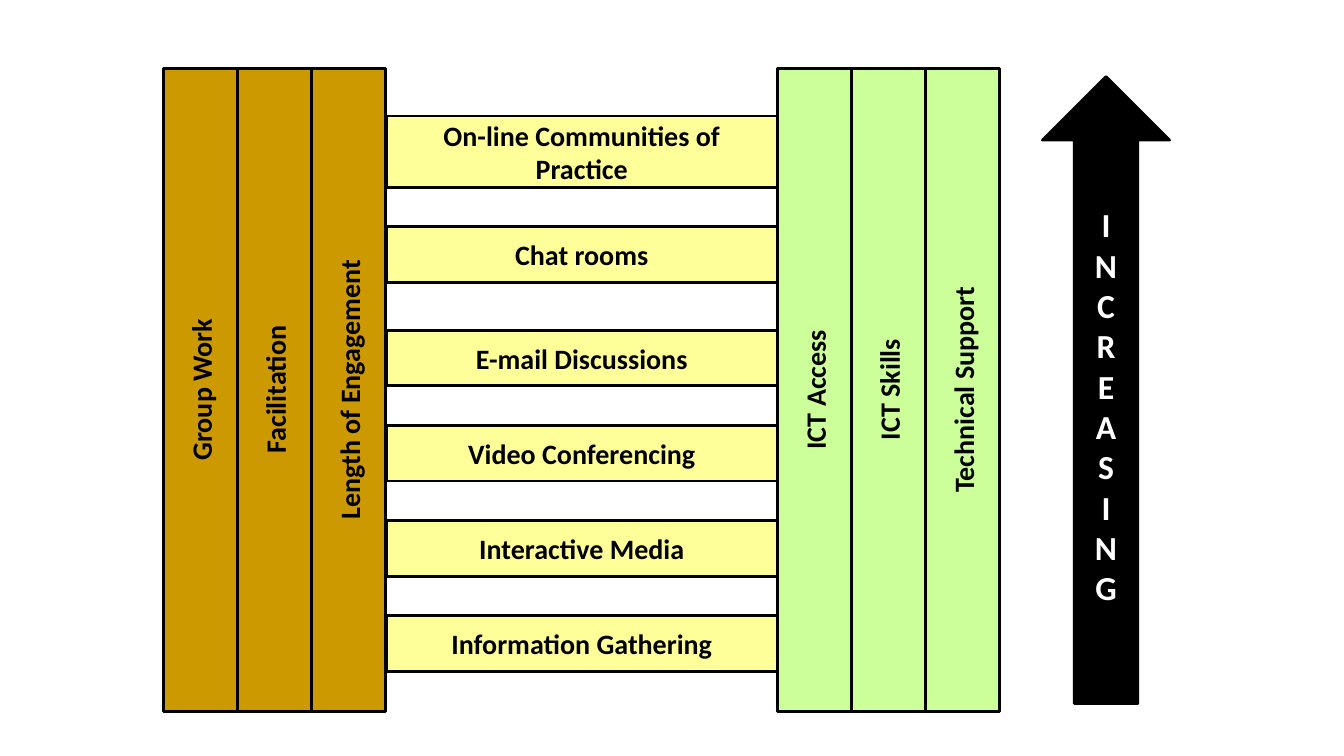
from pptx import Presentation
from pptx.dml.color import RGBColor
from pptx.enum.shapes import MSO_SHAPE
from pptx.enum.text import MSO_ANCHOR, PP_ALIGN
from pptx.util import Inches, Pt

BLACK = RGBColor(0x00, 0x00, 0x00)
WHITE = RGBColor(0xFF, 0xFF, 0xFF)
OCHRE = RGBColor(0xCC, 0x99, 0x00)
GREEN = RGBColor(0xCC, 0xFF, 0x99)
YELLOW = RGBColor(0xFF, 0xFF, 0x99)

PILLAR_LENGTH, PILLAR_WIDTH, PILLAR_PITCH = 6.38, 0.73, 0.735
PILLAR_TOP = 3.5
BAR_LEFT, BAR_WIDTH, BAR_HEIGHT = 3.83, 3.88, 0.55
BAR_BOTTOM_TOP, BAR_PITCH = 6.11, 0.944

presentation = Presentation()
presentation.slide_width = Inches(13.33)
presentation.slide_height = Inches(7.5)
slide = presentation.slides.add_slide(presentation.slide_layouts[6])


def add_block(kind, box, fill, lines, size=20, color=BLACK):
    shape = slide.shapes.add_shape(kind, *(Inches(length) for length in box))
    shape.shadow.inherit = False
    shape.fill.solid()
    shape.fill.fore_color.rgb = fill
    shape.line.color.rgb = BLACK
    shape.line.width = Pt(2)
    frame = shape.text_frame
    frame.word_wrap = True
    frame.vertical_anchor = MSO_ANCHOR.MIDDLE
    for index, line in enumerate(lines):
        paragraph = frame.add_paragraph() if index else frame.paragraphs[0]
        paragraph.alignment = PP_ALIGN.CENTER
        run = paragraph.add_run()
        run.text = line
        run.font.name = "Calibri"
        run.font.size = Pt(size)
        run.font.bold = True
        run.font.color.rgb = color
    return shape


pillar_groups = [
    (-1.2, OCHRE, ["Group Work", "Facilitation", "Length of Engagement"]),
    (4.89, GREEN, ["ICT Access", "ICT Skills", "Technical Support"]),
]
for group_left, fill, labels in pillar_groups:
    for column, label in enumerate(labels):
        left = group_left + column * PILLAR_PITCH
        pillar = add_block(MSO_SHAPE.RECTANGLE,
                           (left, PILLAR_TOP, PILLAR_LENGTH, PILLAR_WIDTH),
                           fill, [label])
        pillar.rotation = 270

bars = [
    (BAR_BOTTOM_TOP - row * BAR_PITCH, BAR_HEIGHT, label)
    for row, label in enumerate(["Information Gathering", "Interactive Media",
                                 "Video Conferencing", "E-mail Discussions"])
]
bars += [
    (2.25, BAR_HEIGHT, "Chat rooms"),
    (1.15, 0.71, "On-line Communities of Practice"),
]
for top, height, label in bars:
    add_block(MSO_SHAPE.RECTANGLE, (BAR_LEFT, top, BAR_WIDTH, height),
              YELLOW, [label])

add_block(MSO_SHAPE.UP_ARROW, (10.34, 0.76, 1.26, 6.22), BLACK,
          "INCREASING", size=24, color=WHITE)

presentation.save("out.pptx")
